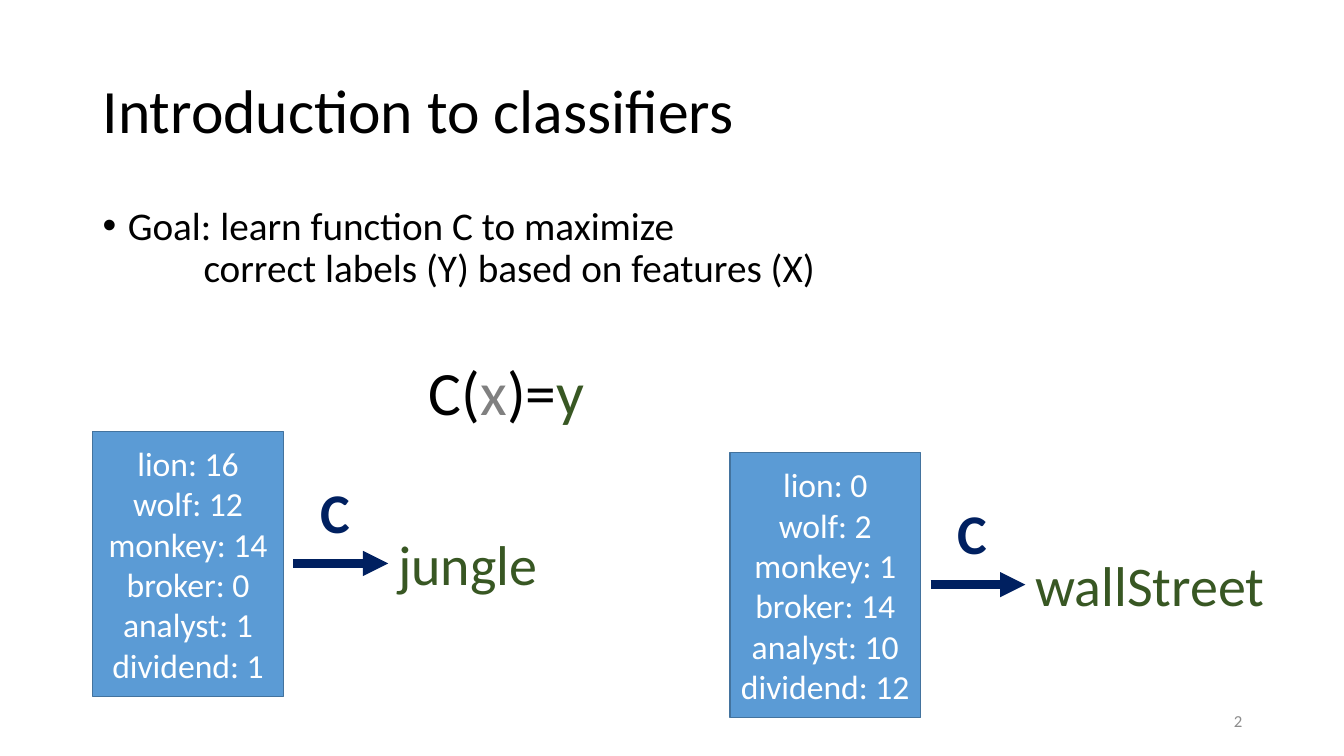
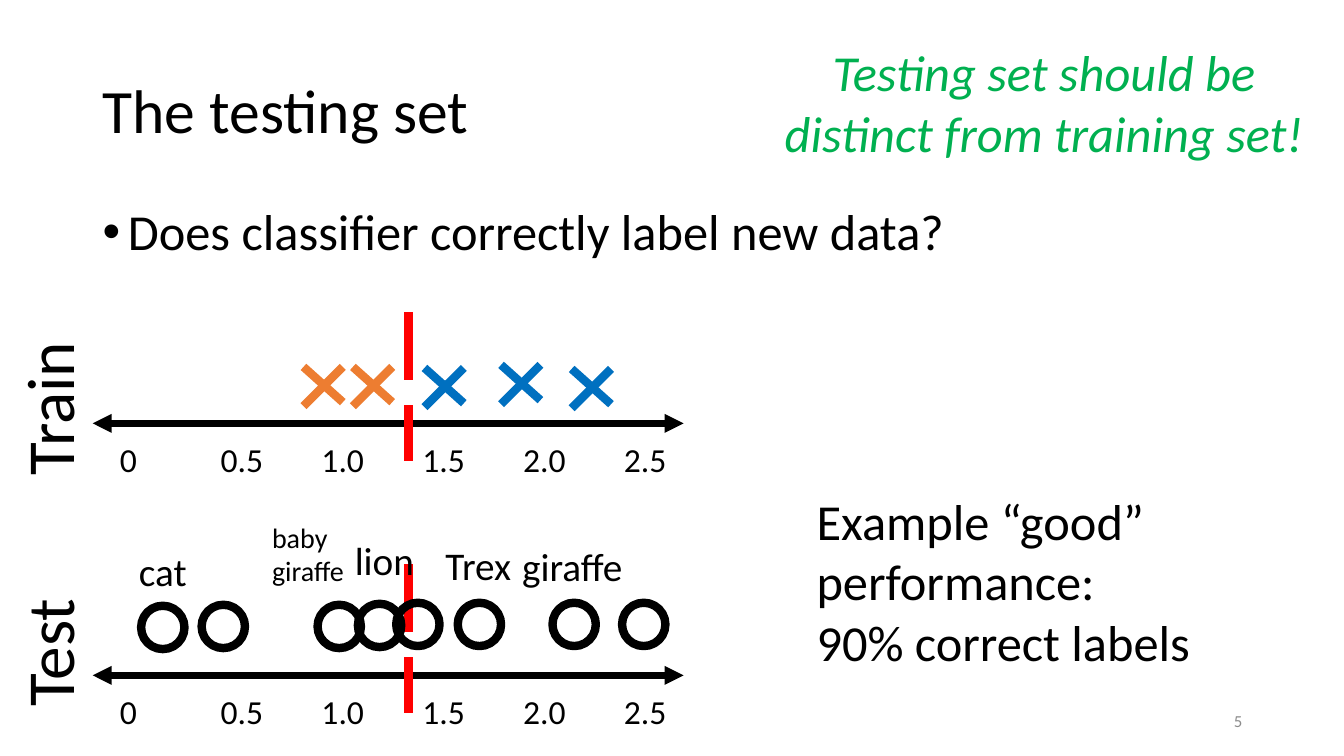
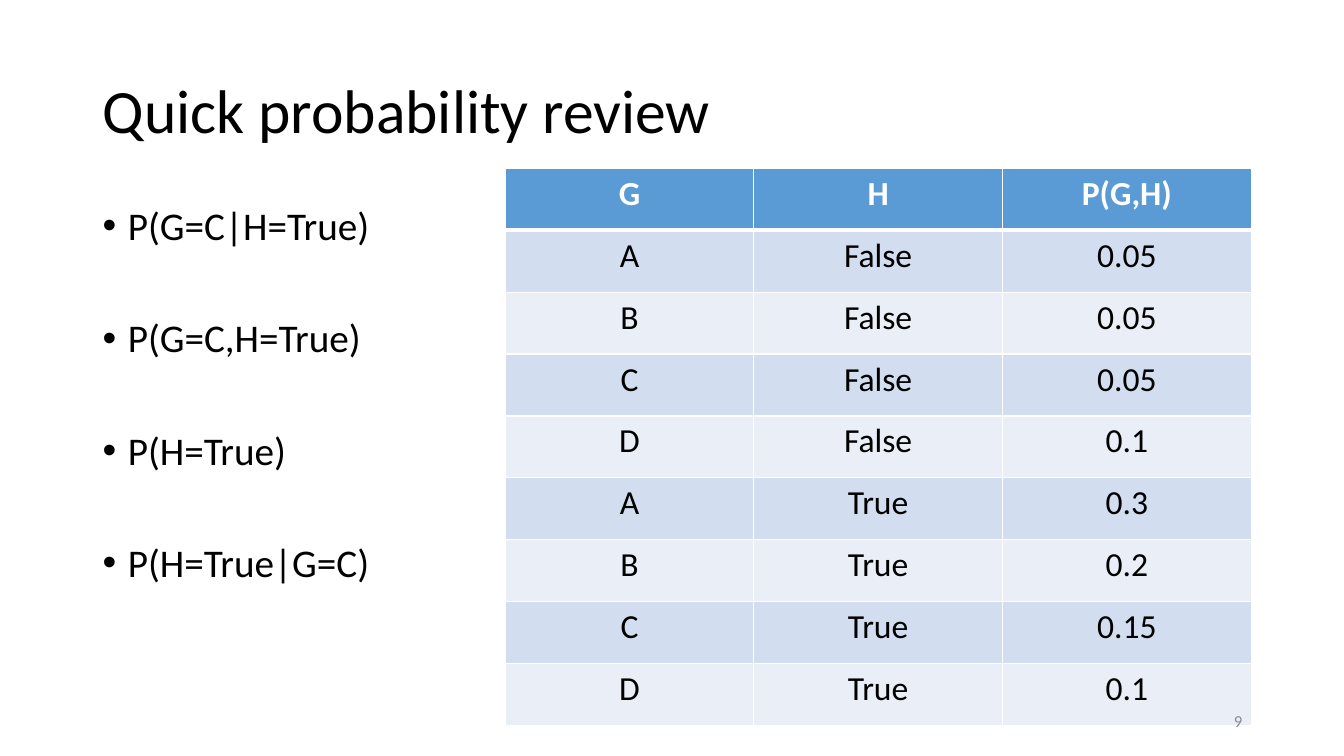
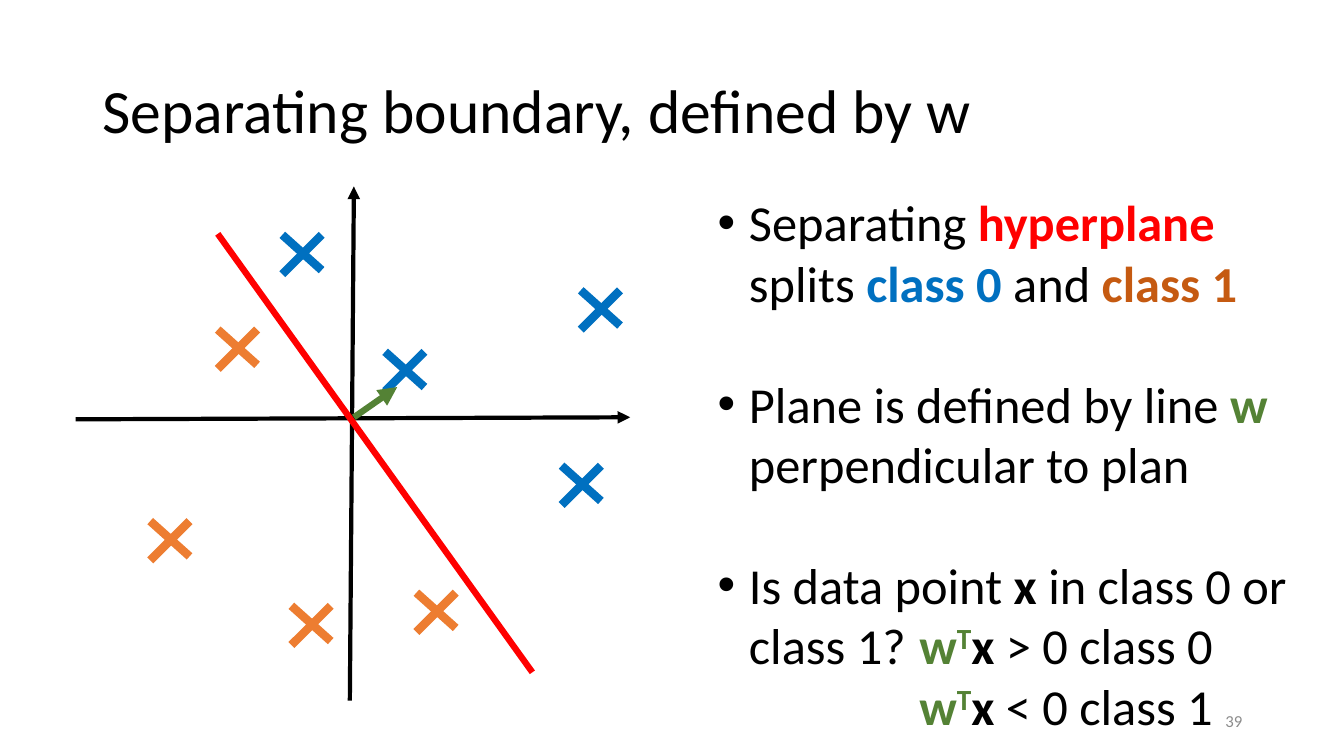
from lxml.etree import SubElement
from pptx import Presentation
from pptx.dml.color import RGBColor
from pptx.enum.dml import MSO_LINE
from pptx.enum.shapes import MSO_CONNECTOR, MSO_SHAPE
from pptx.enum.text import MSO_ANCHOR, PP_ALIGN
from pptx.oxml.ns import qn
from pptx.util import Inches, Pt


class Theme:
    font = "Calibri"
    tab_width = 1
    black = RGBColor.from_string("000000")
    white = RGBColor.from_string("FFFFFF")
    gray = RGBColor.from_string("808080")
    number_gray = RGBColor.from_string("8C8C8C")
    panel = RGBColor.from_string("5B9BD5")
    panel_edge = RGBColor.from_string("43739E")
    bands = [RGBColor.from_string("D2DEEF"), RGBColor.from_string("EAEFF7")]
    navy = RGBColor.from_string("002060")
    blue = RGBColor.from_string("0070C0")
    orange = RGBColor.from_string("ED7D31")
    dark_orange = RGBColor.from_string("C55A11")
    red = RGBColor.from_string("FF0000")
    bright_green = RGBColor.from_string("00B050")
    green = RGBColor.from_string("548235")
    dark_green = RGBColor.from_string("385723")
    title, axis_name, label, large, body, medium, small, number = 44, 48, 40, 36, 28, 24, 20, 12


def add_text(slide, box, paragraphs, size, color=Theme.black, bold=False, italic=False,
             align=PP_ALIGN.LEFT, anchor=MSO_ANCHOR.TOP, wrap=True, bullet=None,
             line_spacing=None, before=0, gap=0, panel=False):
    bounds = [Inches(value) for value in box]
    if panel:
        shape = slide.shapes.add_shape(MSO_SHAPE.RECTANGLE, *bounds)
        shape.shadow.inherit = False
        shape.fill.solid()
        shape.fill.fore_color.rgb = Theme.panel
        shape.line.color.rgb = Theme.panel_edge
        shape.line.width = Pt(1)
    else:
        shape = slide.shapes.add_textbox(*bounds)
    frame = shape.text_frame
    frame.word_wrap = wrap
    frame.vertical_anchor = anchor
    for index, runs in enumerate(paragraphs):
        paragraph = frame.add_paragraph() if index else frame.paragraphs[0]
        paragraph.alignment = align
        paragraph.line_spacing = line_spacing
        paragraph.space_before = Pt(gap if index else before)
        properties = paragraph._p.get_or_add_pPr()
        properties.set("defTabSz", str(Inches(Theme.tab_width)))
        if bullet:
            properties.set("marL", str(Inches(bullet)))
            properties.set("indent", str(-Inches(bullet)))
            SubElement(properties, qn("a:buFont")).set("typeface", "Arial")
            SubElement(properties, qn("a:buChar")).set("char", "•")
        font = paragraph.font
        font.name, font.size, font.bold, font.italic = Theme.font, Pt(size), bold, italic
        font.color.rgb = color
        for text, *styles in [(runs,)] if isinstance(runs, str) else runs:
            for line_index, line_text in enumerate(text.split("\n")):
                if line_index:
                    paragraph.add_line_break()
                run = paragraph.add_run()
                run.text = line_text
                for style in styles:
                    if style == "bold":
                        run.font.bold = True
                    elif style == "superscript":
                        run._r.get_or_add_rPr().set("baseline", "30000")
                    else:
                        run.font.color.rgb = style
    return shape


def add_line(slide, start, end, color, width, head=False, tail=False, dash=None):
    points = [Inches(value) for value in (*start, *end)]
    connector = slide.shapes.add_connector(MSO_CONNECTOR.STRAIGHT, *points)
    connector.line.color.rgb = color
    connector.line.width = Pt(width)
    if dash:
        connector.line.dash_style = dash
    properties = connector._element.spPr
    for name, wanted in (("a:headEnd", head), ("a:tailEnd", tail)):
        if wanted:
            SubElement(properties.find(qn("a:ln")), qn(name)).set("type", "triangle")
    SubElement(properties, qn("a:effectLst"))


presentation = Presentation()
presentation.slide_width = Inches(13.33)
presentation.slide_height = Inches(7.5)

titles = ["Introduction to classifiers", "The testing set", "Quick probability review",
          "Separating boundary, defined by w"]
slides = []
for title in titles:
    slide = presentation.slides.add_slide(presentation.slide_layouts[6])
    add_text(slide, (0.92, 0.4, 11.5, 1.45), [title], Theme.title,
             anchor=MSO_ANCHOR.MIDDLE, line_spacing=0.9)
    slides.append(slide)
intro, testing, probability, boundary = slides

body_bullets = [
    (intro, 8.21, 4.76, Theme.body,
     ["Goal: learn function C to maximize \n\tcorrect labels (Y) based on features (X)"]),
    (testing, 11.5, 1.06, Theme.large, ["Does classifier correctly label new data?"]),
    (probability, 3.87, 4.76, Theme.body,
     ["P(G=C|H=True)", "P(G=C,H=True)", "P(H=True)", "P(H=True|G=C)"]),
]
for slide, width, height, size, bullets in body_bullets:
    add_text(slide, (0.92, 2, width, height), bullets, size, bullet=0.25,
             line_spacing=0.9, before=10, gap=50)

add_text(intro, (0.92, 3.52, 8.21, 0.8),
         [[("C(",), ("x", Theme.gray), (")=",), ("y", Theme.dark_green)]],
         Theme.title, align=PP_ALIGN.CENTER, anchor=MSO_ANCHOR.MIDDLE, line_spacing=0.9)

words = ["lion", "wolf", "monkey", "broker", "analyst", "dividend"]
examples = [
    (0.92, 4.28, [16, 12, 14, 0, 1, 1], "jungle", 1.6),
    (7.24, 4.49, [0, 2, 1, 14, 10, 12], "wallStreet", 2.5),
]
for left, top, counts, answer, answer_width in examples:
    features = [f"{word}: {count}" for word, count in zip(words, counts)]
    add_text(intro, (left, top, 1.89, 2.63), features, Theme.medium, Theme.white,
             align=PP_ALIGN.CENTER, anchor=MSO_ANCHOR.MIDDLE, panel=True)
    add_line(intro, (left + 1.99, top + 1.31), (left + 2.93, top + 1.31), Theme.navy, 6, tail=True)
    add_text(intro, (left + 2.93, top + 0.92, answer_width, 0.77), [answer],
             Theme.label, Theme.dark_green, wrap=False)
    add_text(intro, (left + 2.16, top + 0.41, 0.5, 0.77), ["C"],
             Theme.label, Theme.navy, bold=True, wrap=False)

for axis_top, name, name_box in ((4.2, "Train", (-0.29, 3.59, 1.54, 0.91)),
                                 (6.7, "Test", (-0.17, 6.01, 1.29, 0.91))):
    add_line(testing, (0.92, axis_top), (6.78, axis_top), Theme.black, 4.5, head=True, tail=True)
    add_text(testing, (1.09, axis_top + 0.11, 5.69, 0.5),
             ["0\t0.5\t1.0\t1.5\t2.0\t2.5"], Theme.medium)
    add_line(testing, (4.05, axis_top - 1.1), (4.05, axis_top + 0.37), Theme.red, 6,
             dash=MSO_LINE.LONG_DASH)
    add_text(testing, name_box, [name], Theme.axis_name, wrap=False).rotation = 270

add_line(boundary, (3.47, 6.95), (3.51, 1.85), Theme.black, 3, tail=True)
add_line(boundary, (0.75, 4.16), (6.25, 4.14), Theme.black, 3, tail=True)

crosses = [
    (testing, Theme.blue, [(4.21, 3.65), (5.67, 3.66), (4.97, 3.62)]),
    (testing, Theme.orange, [(3.5, 3.64), (3.01, 3.64)]),
    (boundary, Theme.orange, [(2.16, 3.27), (1.49, 5.17), (2.89, 6.01), (4.13, 5.88)]),
    (boundary, Theme.blue, [(3.82, 3.49), (2.8, 2.33), (5.76, 2.88), (5.57, 4.62)]),
]
for slide, color, corners in crosses:
    for left, top in corners:
        for start_offset, end_offset in ((0, 0.35), (0.39, 0)):
            add_line(slide, (left, top + start_offset), (left + 0.39, top + end_offset), color, 6)

test_points = [(2, 6), (4.54, 5.98), (3.15, 6), (3.93, 5.98),
               (3.55, 5.99), (5.48, 5.98), (6.17, 5.98), (1.4, 6.01)]
for left, top in test_points:
    circle = testing.shapes.add_shape(MSO_SHAPE.OVAL, Inches(left), Inches(top),
                                      Inches(0.43), Inches(0.43))
    circle.shadow.inherit = False
    circle.fill.background()
    circle.line.color.rgb = Theme.black
    circle.line.width = Pt(6)

animals = [
    ("cat", (1.28, 5.38, 0.68, 0.57), Theme.body),
    ("lion", (3.42, 5.27, 0.79, 0.57), Theme.body),
    ("Trex", (4.32, 5.32, 0.86, 0.57), Theme.body),
    ("giraffe", (5.08, 5.33, 1.21, 0.57), Theme.body),
    ("baby\ngiraffe", (2.6, 5.11, 0.93, 0.77), Theme.small),
]
for name, box, size in animals:
    add_text(testing, box, [name], size, wrap=False)
add_text(testing, (8, 4.81, 4.91, 1.92),
         ["Example “good” performance:", "90% correct labels"], Theme.large)
add_text(testing, (7.59, 0.36, 5.53, 1.31),
         ["Testing set should be distinct from training set!"], Theme.large,
         Theme.bright_green, italic=True, align=PP_ALIGN.CENTER)

rows = [
    ("G", "H", "P(G,H)"),
    ("A", "False", "0.05"),
    ("B", "False", "0.05"),
    ("C", "False", "0.05"),
    ("D", "False", "0.1"),
    ("A", "True", "0.3"),
    ("B", "True", "0.2"),
    ("C", "True", "0.15"),
    ("D", "True", "0.1"),
]
table = probability.shapes.add_table(len(rows), 3, Inches(5.01), Inches(1.67),
                                     Inches(7.4), Inches(5.53)).table
for row_index, row in enumerate(rows):
    header = row_index == 0
    for column_index, value in enumerate(row):
        cell = table.cell(row_index, column_index)
        cell.text = value
        paragraph = cell.text_frame.paragraphs[0]
        paragraph.alignment = PP_ALIGN.CENTER
        font = paragraph.font
        font.name, font.size, font.bold = Theme.font, Pt(Theme.medium), header
        font.color.rgb = Theme.white if header else Theme.black
        for side in ("L", "R", "T", "B"):
            thick = (header and side == "B") or (row_index == 1 and side == "T")
            border = SubElement(cell._tc.get_or_add_tcPr(), qn(f"a:ln{side}"))
            border.set("w", str(Pt(3 if thick else 1)))
            border_fill = SubElement(border, qn("a:solidFill"))
            SubElement(border_fill, qn("a:srgbClr")).set("val", str(Theme.white))
        cell.fill.solid()
        cell.fill.fore_color.rgb = Theme.panel if header else Theme.bands[(row_index - 1) % 2]

add_line(boundary, (2.16, 2.32), (5.28, 6.67), Theme.red, 4.5)
add_line(boundary, (3.51, 4.14), (3.94, 3.84), Theme.green, 4.5, tail=True)
weights = [("w", "bold", Theme.green), ("T", "bold", "superscript", Theme.green), ("x ", "bold")]
add_text(boundary, (7.02, 1.85, 5.88, 5.55), [
    [("Separating ",), ("hyperplane", "bold", Theme.red), (" splits ",),
     ("class 0", "bold", Theme.blue), (" and ",), ("class 1", "bold", Theme.dark_orange)],
    [("Plane is defined by line ",), ("w ", "bold", Theme.green), ("perpendicular to plan",)],
    [("Is data point ",), ("x", "bold"), (" in class 0 or class 1?\t",),
     *weights, ("> 0 class 0\n\t\t",), *weights, ("< 0 class 1",)],
], Theme.large, bullet=0.31, gap=43)

for slide, number in zip(slides, (2, 5, 9, 39)):
    add_text(slide, (9.42, 6.95, 3, 0.4), [str(number)], Theme.number, Theme.number_gray,
             align=PP_ALIGN.RIGHT, anchor=MSO_ANCHOR.MIDDLE)

presentation.save("out.pptx")
